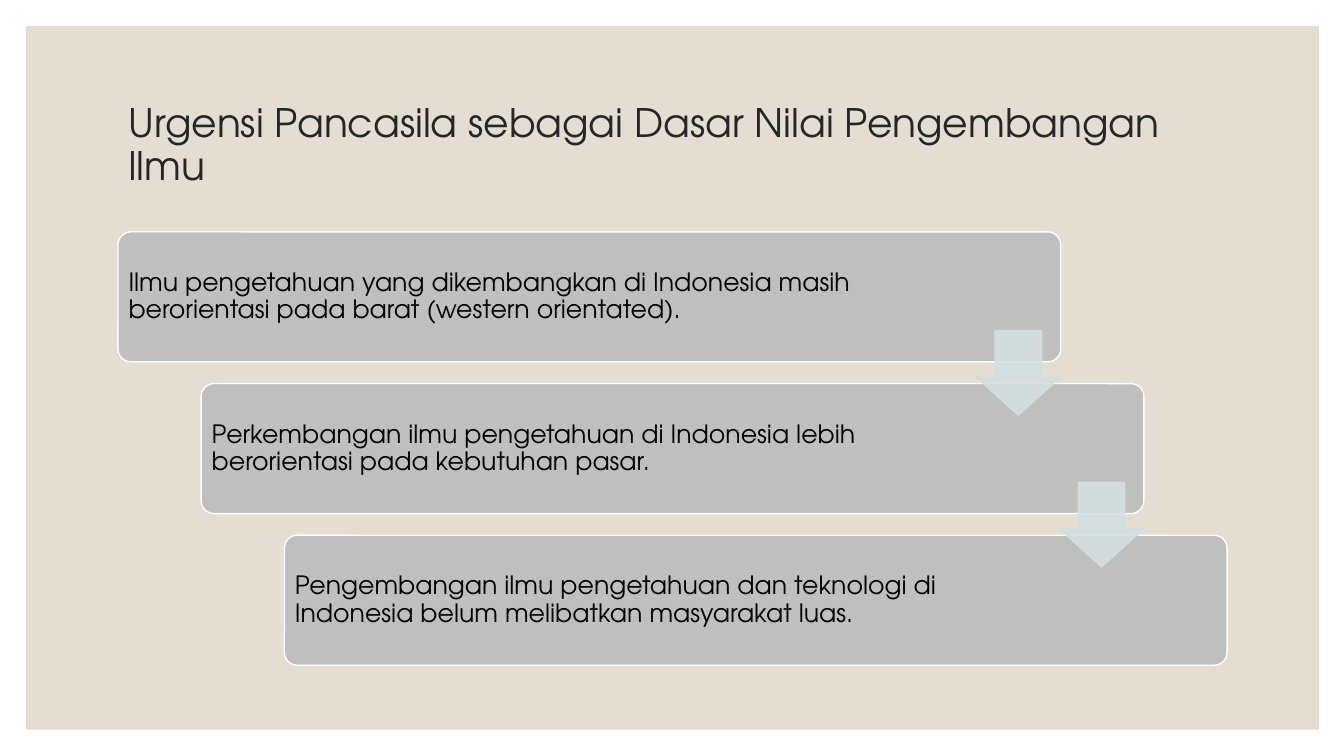
"""Build a slide with three stepped statements joined by down arrows."""
import lxml.etree
import pptx
import pptx.dml.color
import pptx.enum.shapes
import pptx.enum.text
import pptx.oxml.ns
import pptx.util

Inches = pptx.util.Inches
Shapes = pptx.enum.shapes.MSO_SHAPE

TITLE = "Urgensi Pancasila sebagai Dasar Nilai Pengembangan Ilmu"
STATEMENTS = [
    ("Ilmu pengetahuan yang dikembangkan di Indonesia masih berorientasi pada barat (western orientated).", 7.96),
    ("Perkembangan ilmu pengetahuan di Indonesia lebih berorientasi pada kebutuhan pasar.", 7.61),
    ("Pengembangan ilmu pengetahuan dan teknologi di Indonesia belum melibatkan masyarakat luas.", 7.61),
]
THEME = {
    "font": "TeX Gyre Adventor", "title_size": 28, "body_size": 18,
    "panel": "E3DED1", "card": "BFBFBF", "edge": "FFFFFF",
    "arrow": "D3E0DF", "title": "262626", "body": "000000",
}
LEFT, TOP = 1.17, 2.3
STEP_X, STEP_Y = 0.825, 1.505
CARD_WIDTH, CARD_HEIGHT = 9.35, 1.29
TEXT_INSET = 0.035
ARROW_SIZE, ARROW_DROP = 0.84, 0.98


def rgb(name):
    """Return a theme colour."""
    return pptx.dml.color.RGBColor.from_string(THEME[name])


def set_alpha(fill_parent, percent):
    """Make the solid fill directly under an element translucent."""
    color = fill_parent.find(pptx.oxml.ns.qn("a:solidFill"))[0]
    alpha = lxml.etree.SubElement(color, pptx.oxml.ns.qn("a:alpha"))
    alpha.set("val", str(percent * 1000))


def add_block(page, kind, box, fill, edge=None, adjustments=(), opacity=100):
    """Add a filled preset shape."""
    block = page.shapes.add_shape(kind, *map(Inches, box))
    block.shadow.inherit = False
    block.fill.solid()
    block.fill.fore_color.rgb = rgb(fill)
    if edge:
        block.line.color.rgb = rgb(edge)
        block.line.width = pptx.util.Pt(1)
    else:
        block.line.fill.background()
    for index, value in enumerate(adjustments):
        block.adjustments[index] = value
    if opacity < 100:
        set_alpha(block.element.spPr, opacity)
        set_alpha(block.line._get_or_add_ln(), opacity)
    return block


def write(box, text, size, color, inset=None, space_after=0):
    """Write formatted, vertically centred text into a box."""
    frame = box.text_frame
    frame.word_wrap = True
    frame.auto_size = pptx.enum.text.MSO_AUTO_SIZE.NONE
    frame.vertical_anchor = pptx.enum.text.MSO_ANCHOR.MIDDLE
    if inset is not None:
        frame.margin_left = frame.margin_right = Inches(inset)
        frame.margin_top = frame.margin_bottom = Inches(inset)
    para = frame.paragraphs[0]
    para.alignment = pptx.enum.text.PP_ALIGN.LEFT
    para.line_spacing = 0.9
    para.space_before = pptx.util.Pt(0)
    para.space_after = pptx.util.Pt(space_after)
    span = para.add_run()
    span.text = text
    span.font.name = THEME["font"]
    span.font.size = pptx.util.Pt(THEME[size])
    span.font.color.rgb = rgb(color)


def add_title(page):
    """Place the title in front of the background panel."""
    title = page.shapes.title
    title.left, title.top, title.width, title.height = map(Inches, (LEFT, 0.7, 11, 1.5))
    write(title, TITLE, "title_size", "title")
    panel = add_block(page, Shapes.RECTANGLE, (0.26, 0.26, 12.82, 6.98), "panel")
    title.element.addprevious(panel.element)


def add_steps(page):
    """Lay out the cards as a staircase, then the arrows between them."""
    corners = [(LEFT + i * STEP_X, TOP + i * STEP_Y) for i in range(len(STATEMENTS))]
    for (left, top), (text, width) in zip(corners, STATEMENTS):
        add_block(page, Shapes.ROUNDED_RECTANGLE, (left, top, CARD_WIDTH, CARD_HEIGHT),
                  "card", edge="edge", adjustments=[0.1])
        area = (left + TEXT_INSET, top + TEXT_INSET, width, CARD_HEIGHT - 2 * TEXT_INSET)
        box = page.shapes.add_textbox(*map(Inches, area))
        write(box, text, "body_size", "body", inset=0.07, space_after=6.3)
    for left, top in corners[:-1]:
        place = (left + CARD_WIDTH - ARROW_SIZE, top + ARROW_DROP, ARROW_SIZE, ARROW_SIZE)
        add_block(page, Shapes.DOWN_ARROW, place, "arrow", edge="arrow",
                  adjustments=[0.55, 0.45], opacity=90)


def main():
    """Create and save the deck."""
    deck = pptx.Presentation()
    deck.slide_width, deck.slide_height = Inches(13.33), Inches(7.5)
    page = deck.slides.add_slide(deck.slide_layouts[5])
    add_title(page)
    add_steps(page)
    deck.save("out.pptx")


if __name__ == "__main__":
    main()
